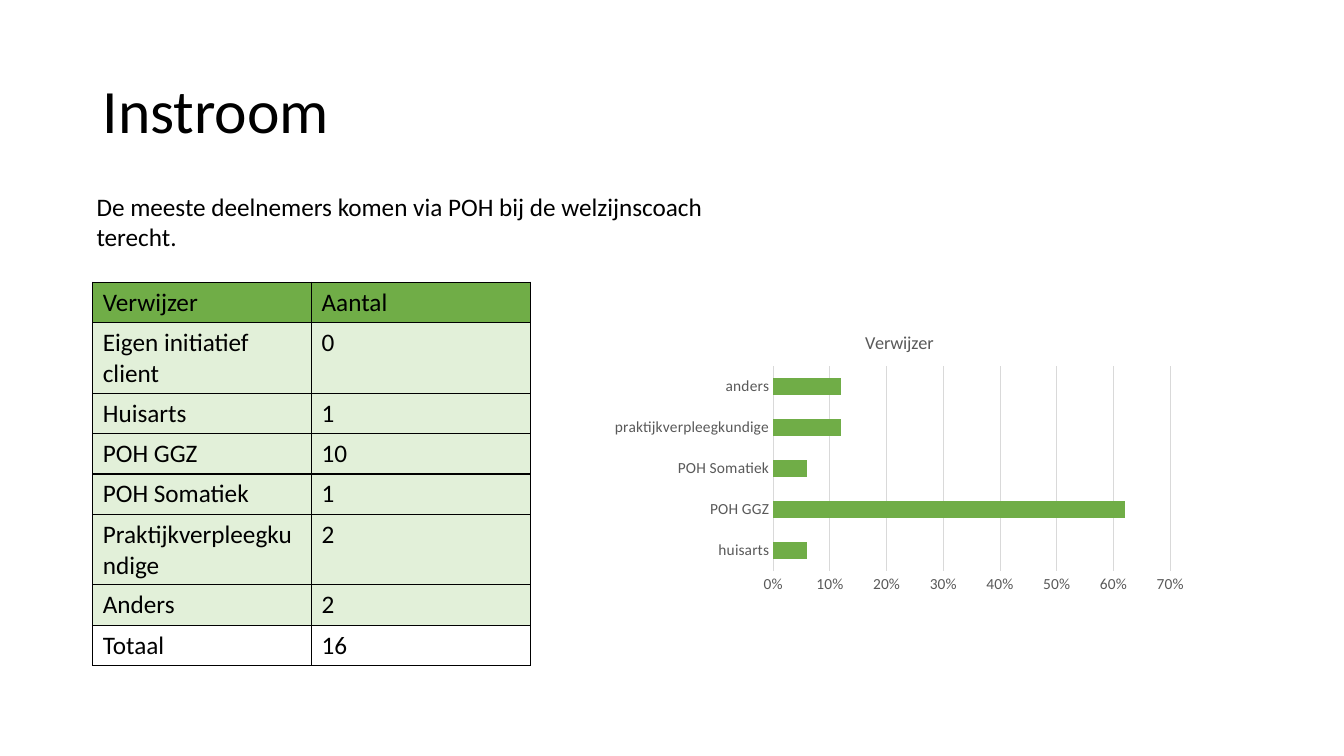
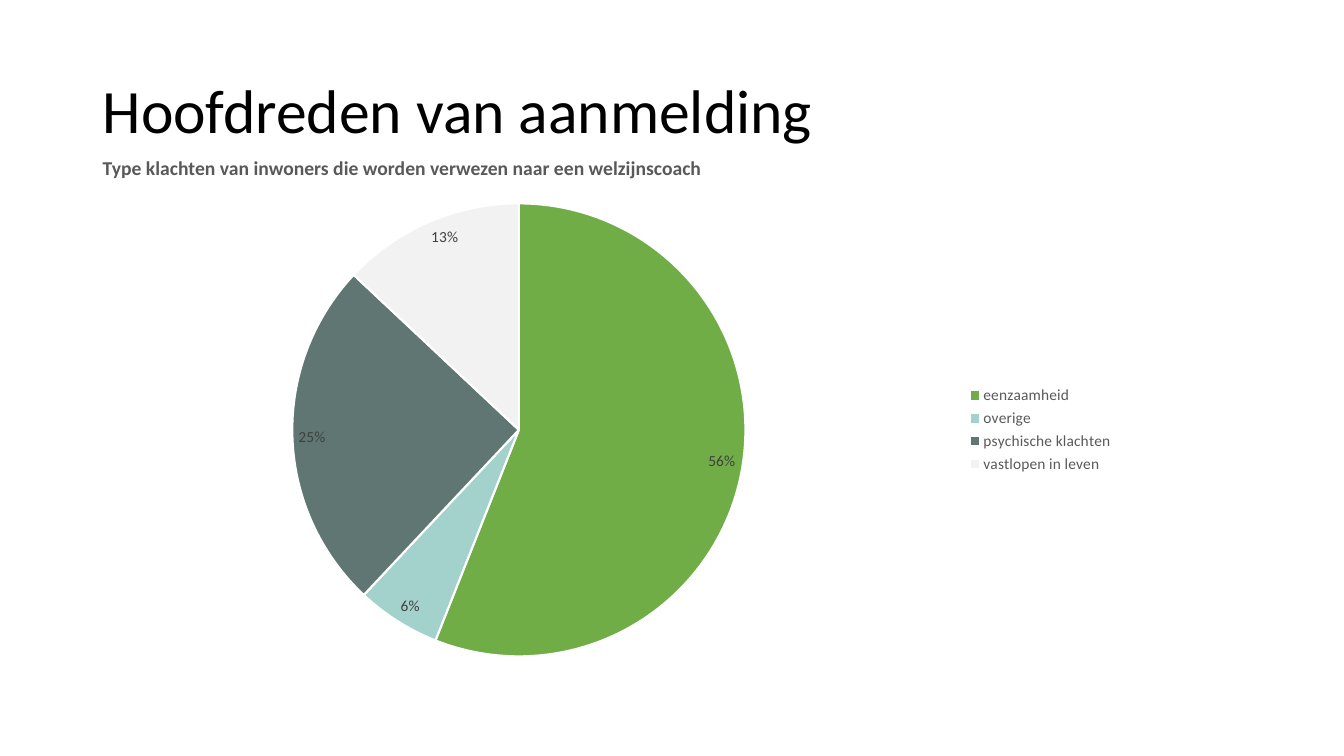
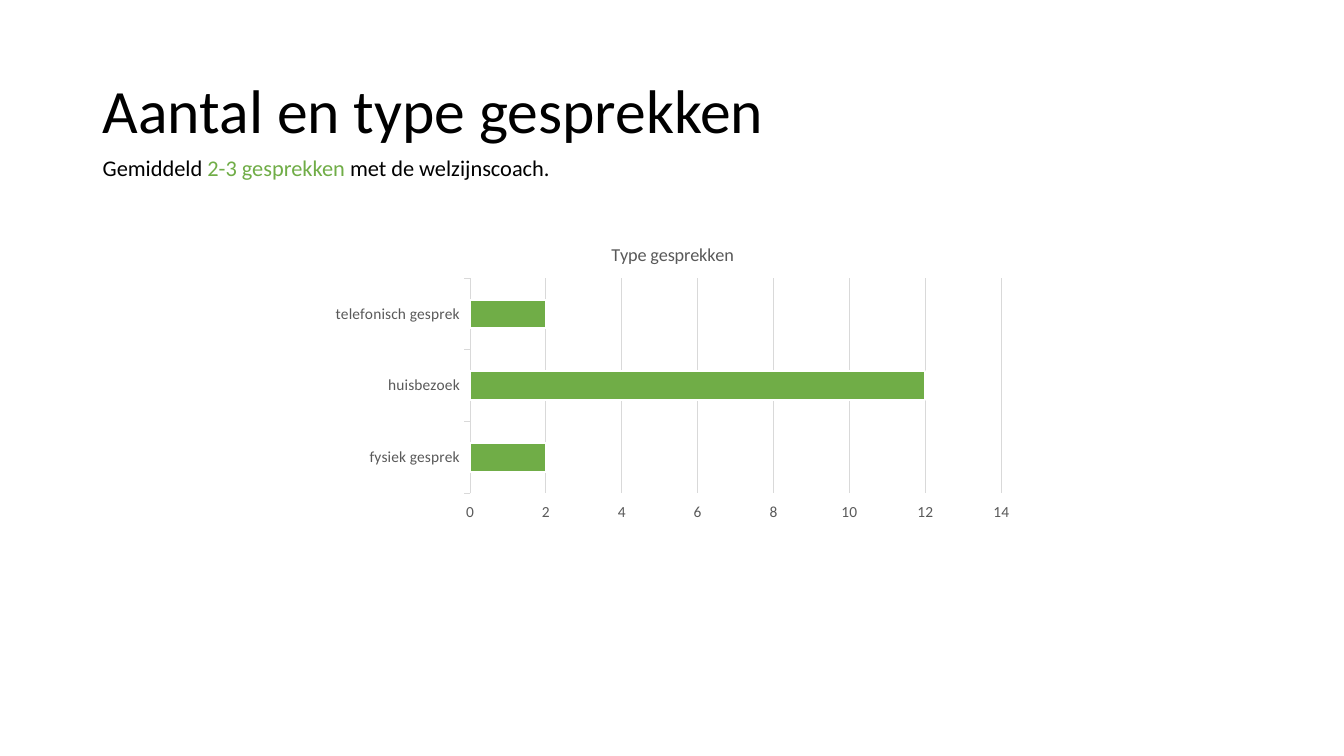
"""Build three slides on intake, reasons for referral and conversations."""
from lxml.etree import SubElement
from pptx import Presentation
from pptx.chart.data import CategoryChartData
from pptx.dml.color import RGBColor
from pptx.enum.chart import XL_CHART_TYPE as ChartType
from pptx.enum.chart import XL_LABEL_POSITION as LabelPosition
from pptx.enum.chart import XL_LEGEND_POSITION as LegendPosition
from pptx.enum.chart import XL_TICK_MARK as TickMark
from pptx.enum.text import MSO_ANCHOR as Anchor
from pptx.oxml import parse_xml
from pptx.oxml.ns import nsdecls, qn
from pptx.util import Inches, Pt

BLACK = RGBColor(0x00, 0x00, 0x00)
WHITE = RGBColor(0xFF, 0xFF, 0xFF)
GREEN = RGBColor(0x70, 0xAD, 0x47)
PALE_GREEN = RGBColor(0xE2, 0xF0, 0xD9)
TEAL = RGBColor(0xA3, 0xD1, 0xCB)
SLATE = RGBColor(0x60, 0x76, 0x72)
PALE_GREY = RGBColor(0xF2, 0xF2, 0xF2)
GREY = RGBColor(0x59, 0x59, 0x59)
DARK_GREY = RGBColor(0x40, 0x40, 0x40)
LINE_GREY = RGBColor(0xD9, 0xD9, 0xD9)
FONT = "Calibri"


def write(frame, text, size=18, color=BLACK, bold=False, spacing=1.0,
          anchor=Anchor.TOP, accent=None):
    """Fill a text frame; every second part of a list takes the accent colour."""
    frame.word_wrap = True
    frame.vertical_anchor = anchor
    para = frame.paragraphs[0]
    para.line_spacing = spacing
    parts = [text] if isinstance(text, str) else text
    for index, part in enumerate(parts):
        span = para.add_run()
        span.text = part
        span.font.name = FONT
        span.font.size = Pt(size)
        span.font.bold = bold
        span.font.color.rgb = accent if index % 2 else color


def add_chart(page, kind, place, values, number_format="General"):
    """Add a chart with one series and the shared font."""
    data = CategoryChartData(number_format=number_format)
    data.categories = list(values)
    data.add_series("Series 1", list(values.values()))
    chart = page.shapes.add_chart(kind, *map(Inches, place), data).chart
    chart.font.name = FONT
    chart.font.size = Pt(11)
    chart.font.color.rgb = GREY
    chart.has_legend = False
    chart.has_title = False
    return chart


deck = Presentation()
deck.slide_width = Inches(13.33)
deck.slide_height = Inches(7.5)

headings = [
    ("Instroom", "De meeste deelnemers komen via POH bij de welzijnscoach terecht.",
     (0.86, 1.85, 6.67, 0.71), {}),
    ("Hoofdreden van aanmelding",
     "Type klachten van inwoners die worden verwezen naar een welzijnscoach",
     (0.92, 1.5, 10.78, 0.34), {"size": 14, "color": GREY, "bold": True}),
    ("Aantal en type gesprekken",
     ["Gemiddeld ", "2-3 gesprekken ", "met de welzijnscoach."],
     (0.92, 1.48, 7.89, 0.37), {"size": 16, "accent": GREEN}),
]
pages = []
for title, subtitle, place, style in headings:
    page = deck.slides.add_slide(deck.slide_layouts[6])
    title_box = page.shapes.add_textbox(Inches(0.92), Inches(0.4), Inches(11.5), Inches(1.45))
    write(title_box.text_frame, title, size=44, spacing=0.9, anchor=Anchor.MIDDLE)
    subtitle_box = page.shapes.add_textbox(*map(Inches, place))
    write(subtitle_box.text_frame, subtitle, **style)
    pages.append(page)
intake_page, reason_page, talk_page = pages

referrers = [
    ("Verwijzer", "Aantal"),
    ("Eigen initiatief client", "0"),
    ("Huisarts", "1"),
    ("POH GGZ", "10"),
    ("POH Somatiek", "1"),
    ("Praktijkverpleegkundige", "2"),
    ("Anders", "2"),
    ("Totaal", "16"),
]
row_fills = [GREEN] + [PALE_GREEN] * (len(referrers) - 2) + [WHITE]
table = intake_page.shapes.add_table(
    len(referrers), 2, Inches(0.92), Inches(2.8),
    Inches(4.34), Inches(0.36 * len(referrers))).table
table.first_row = False
table.horz_banding = False
for row, texts, fill in zip(table.rows, referrers, row_fills):
    for cell, text in zip(row.cells, texts):
        write(cell.text_frame, text)
        properties = cell._tc.get_or_add_tcPr()
        for side in ("lnL", "lnR", "lnT", "lnB"):
            border = SubElement(properties, qn(f"a:{side}"), w=str(Pt(1)))
            border.append(parse_xml(
                f'<a:solidFill {nsdecls("a")}><a:srgbClr val="{BLACK}"/></a:solidFill>'))
        cell.fill.solid()
        cell.fill.fore_color.rgb = fill

referrer_shares = {"huisarts": 0.06, "POH GGZ": 0.62, "POH Somatiek": 0.06,
                   "praktijkverpleegkundige": 0.12, "anders": 0.12}
talk_counts = {"fysiek gesprek": 2, "huisbezoek": 12, "telefonisch gesprek": 2}
bar_charts = [
    (intake_page, "Verwijzer", (5.98, 3.14, 5.88, 2.81), referrer_shares,
     "0%", 0.7, 0.1, 145, -100, TickMark.NONE, None),
    (talk_page, "Type gesprekken", (3.19, 2.26, 6.96, 2.98), talk_counts,
     "General", 14, 2, 150, 0, TickMark.OUTSIDE, WHITE),
]
for page, title, place, values, fmt, top, step, gap, overlap, tick, outline in bar_charts:
    chart = add_chart(page, ChartType.BAR_CLUSTERED, place, values, fmt)
    chart.has_title = True
    write(chart.chart_title.text_frame, title, size=13, color=GREY)
    plot = chart.plots[0]
    plot.gap_width = gap
    plot.overlap = overlap
    plot.vary_by_categories = False
    bars = plot.series[0].format
    bars.fill.solid()
    bars.fill.fore_color.rgb = GREEN
    if outline is not None:
        bars.line.color.rgb = outline
        bars.line.width = Pt(1.5)
    scale = chart.value_axis
    scale.minimum_scale = 0
    scale.maximum_scale = top
    scale.major_unit = step
    scale.tick_labels.number_format = fmt
    scale.tick_labels.number_format_is_linked = False
    scale.format.line.fill.background()
    for axis in (scale, chart.category_axis):
        axis.major_tick_mark = tick
        axis.minor_tick_mark = TickMark.NONE
    for line in (scale.major_gridlines.format.line, chart.category_axis.format.line):
        line.color.rgb = LINE_GREY
        line.width = Pt(0.75)

reason_shares = {"eenzaamheid": 0.56, "overige": 0.06,
                 "psychische klachten": 0.25, "vastlopen in leven": 0.13}
pie = add_chart(reason_page, ChartType.PIE, (0.72, 1.88, 10.43, 4.77), reason_shares, "0%")
pie.has_legend = True
pie.legend.position = LegendPosition.RIGHT
pie.legend.include_in_layout = False
pie_plot = pie.plots[0]
pie_plot.vary_by_categories = True
for index, color in enumerate((GREEN, TEAL, SLATE, PALE_GREY)):
    wedge = pie_plot.series[0].points[index].format
    wedge.fill.solid()
    wedge.fill.fore_color.rgb = color
    wedge.line.color.rgb = WHITE
    wedge.line.width = Pt(1.5)
pie_plot.has_data_labels = True
labels = pie_plot.data_labels
labels.show_value = True
labels.show_percentage = False
labels.number_format = "0%"
labels.number_format_is_linked = False
labels.position = LabelPosition.INSIDE_END
labels.font.name = FONT
labels.font.size = Pt(11)
labels.font.color.rgb = DARK_GREY

deck.save("out.pptx")
